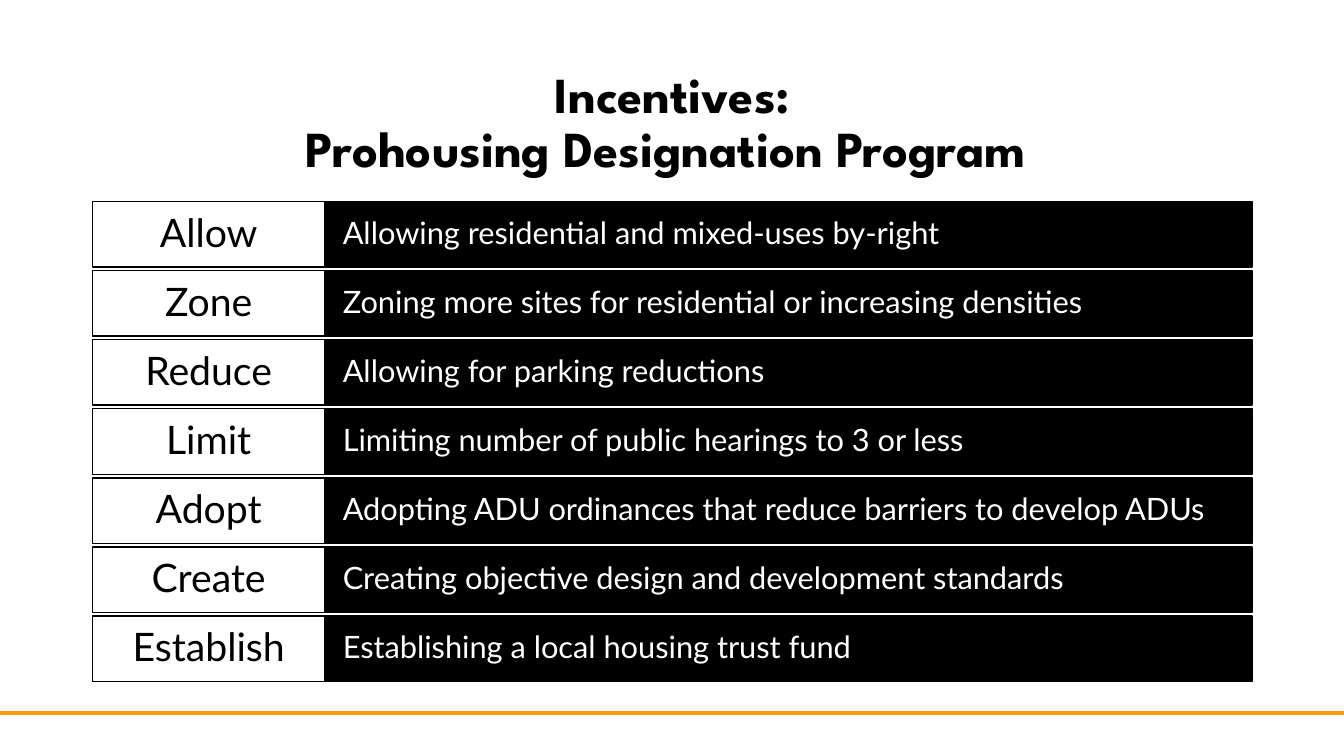
"""Build the slide on the incentives of the Prohousing Designation Program."""
from lxml import etree
from pptx import Presentation
from pptx.dml.color import RGBColor
from pptx.enum.shapes import MSO_CONNECTOR, MSO_SHAPE
from pptx.enum.text import MSO_ANCHOR, MSO_AUTO_SIZE, PP_ALIGN
from pptx.oxml.ns import qn
from pptx.util import Inches, Pt

BLACK = RGBColor(0x00, 0x00, 0x00)
WHITE = RGBColor(0xFF, 0xFF, 0xFF)
ORANGE = RGBColor(0xF6, 0x9B, 0x11)
CENTER, LEFT = PP_ALIGN.CENTER, PP_ALIGN.LEFT
MIDDLE = MSO_ANCHOR.MIDDLE
NO_AUTOFIT = MSO_AUTO_SIZE.NONE
RECTANGLE = MSO_SHAPE.RECTANGLE
STRAIGHT = MSO_CONNECTOR.STRAIGHT

TITLE = "Incentives:\vProhousing Designation Program "
INCENTIVES = [
    ("Allow", "Allowing residential and mixed-uses by-right"),
    ("Zone", "Zoning more sites for residential or increasing densities"),
    ("Reduce", "Allowing for parking reductions"),
    ("Limit", "Limiting number of public hearings to 3 or less"),
    ("Adopt", "Adopting ADU ordinances that reduce barriers to develop ADUs"),
    ("Create", "Creating objective design and development standards"),
    ("Establish", "Establishing a local housing trust fund"),
]

MARGIN_LEFT = 0.92
ACTION_WIDTH = 2.3
DETAIL_WIDTH = 9.2
FIRST_TOP = 2
ROW_HEIGHT = 0.65
ROW_PITCH = 0.685

TITLE_FONT = {"name": "League Spartan", "size": Pt(36), "bold": True}
ACTION_FONT = {"name": "Lato", "size": Pt(28)}
DETAIL_FONT = {"name": "Lato", "size": Pt(22)}


def set_values(target, values):
    """Set each named attribute of the target."""
    for name, value in values.items():
        setattr(target, name, value)


def write_text(shape, text, font, color, alignment, side, edge):
    """Write one formatted paragraph with side and edge margins in inches."""
    frame = shape.text_frame
    set_values(frame, {
        "text": text, "word_wrap": True, "auto_size": NO_AUTOFIT,
        "vertical_anchor": MIDDLE,
        "margin_left": Inches(side), "margin_right": Inches(side),
        "margin_top": Inches(edge), "margin_bottom": Inches(edge),
    })
    paragraph = frame.paragraphs[0]
    set_values(paragraph, {"alignment": alignment, "line_spacing": 0.9})
    for run in paragraph.runs:
        set_values(run.font, font)
        run.font.color.rgb = color


def add_title(slide):
    """Place and format the title placeholder."""
    title = slide.shapes.title
    set_values(title, {
        "left": Inches(MARGIN_LEFT), "top": Inches(0.61),
        "width": Inches(ACTION_WIDTH + DETAIL_WIDTH), "height": Inches(1.24),
    })
    write_text(title, TITLE, TITLE_FONT, BLACK, CENTER, 0.1, 0.05)


def add_footer_line(slide):
    """Draw the orange line across the foot of the slide."""
    line = slide.shapes.add_connector(
        STRAIGHT, Inches(-0.33), Inches(7.07), Inches(13.67), Inches(7.07))
    line.line.color.rgb = ORANGE
    line.line.width = Pt(3)
    etree.SubElement(line.element.spPr, qn("a:effectLst"))
    slide.shapes.title.element.addprevious(line.element)


def add_box(slide, left, top, width, fill):
    """Add one black-outlined box of a row."""
    box = slide.shapes.add_shape(
        RECTANGLE, Inches(left), Inches(top), Inches(width), Inches(ROW_HEIGHT))
    box.shadow.inherit = False
    box.fill.solid()
    box.fill.fore_color.rgb = fill
    box.line.color.rgb = BLACK
    box.line.width = Pt(1)
    return box


def add_incentive(slide, top, action, detail):
    """Add a row with its action and detail."""
    detail_box = add_box(
        slide, MARGIN_LEFT + ACTION_WIDTH, top, DETAIL_WIDTH, BLACK)
    write_text(detail_box, detail, DETAIL_FONT, WHITE, LEFT, 0.18, 0.16)
    action_box = add_box(slide, MARGIN_LEFT, top, ACTION_WIDTH, WHITE)
    write_text(action_box, action, ACTION_FONT, BLACK, CENTER, 0.12, 0.06)


def main():
    """Build and save the presentation."""
    presentation = Presentation()
    presentation.slide_width = Inches(13.33)
    presentation.slide_height = Inches(7.5)
    slide = presentation.slides.add_slide(
        presentation.slide_layouts.get_by_name("Title Only"))
    add_title(slide)
    add_footer_line(slide)
    for row, (action, detail) in enumerate(INCENTIVES):
        add_incentive(slide, FIRST_TOP + row * ROW_PITCH, action, detail)
    presentation.save("out.pptx")


if __name__ == "__main__":
    main()
